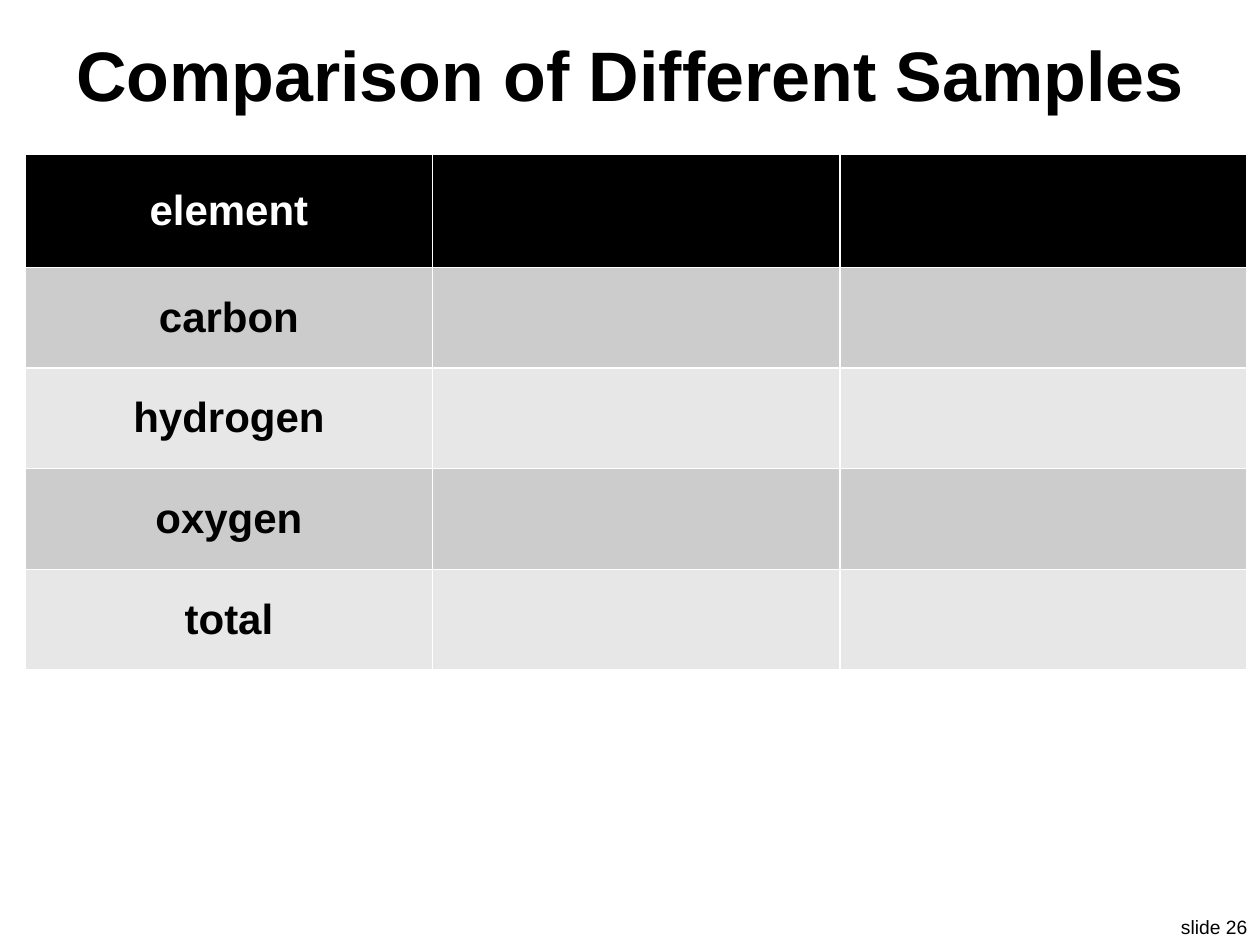
from pptx import Presentation
from pptx.dml.color import RGBColor
from pptx.enum.text import MSO_ANCHOR as Anchor, PP_ALIGN as Align
from pptx.util import Cm, Pt

ELEMENTS = ["element", "carbon", "hydrogen", "oxygen", "total"]
COLUMN_COUNT = 3
BLACK, WHITE = "000000", "FFFFFF"
BAND_FILLS = ["E7E7E7", "CCCCCC"]


def color(hex_value):
    """Return the colour for a hex string."""
    return RGBColor.from_string(hex_value)


def write_text(frame, text, size, align, font_color=BLACK, bold=False):
    """Write one formatted paragraph into a text frame."""
    paragraph = frame.paragraphs[0]
    paragraph.text = text
    paragraph.alignment = align
    font = paragraph.font
    font.name, font.size, font.bold = "Arial", Pt(size), bold
    font.color.rgb = color(font_color)


def add_text(slide, box, text, size, align, bold=False, wrap=True):
    """Add a text box with its text centred vertically."""
    shape = slide.shapes.add_textbox(*map(Cm, box))
    frame = shape.text_frame
    frame.word_wrap = wrap
    frame.vertical_anchor = Anchor.MIDDLE
    write_text(frame, text, size, align, bold=bold)


def fill_cell(cell, text, fill, font_color):
    """Fill one table cell and write its label."""
    cell.fill.solid()
    cell.fill.fore_color.rgb = color(fill)
    cell.vertical_anchor = Anchor.MIDDLE
    write_text(cell.text_frame, text, 24, Align.CENTER, font_color, True)


def add_element_table(slide):
    """Add the element table with blank columns for the samples."""
    shape = slide.shapes.add_table(
        len(ELEMENTS), COLUMN_COUNT, Cm(0.51), Cm(3.1), Cm(24.63), Cm(10.41)
    )
    table = shape.table
    for column in table.columns:
        column.width = Cm(8.21)
    for index, element in enumerate(ELEMENTS):
        header = index == 0
        table.rows[index].height = Cm(2.29 if header else 2.03)
        fill = BLACK if header else BAND_FILLS[index % 2]
        font_color = WHITE if header else BLACK
        for position in range(COLUMN_COUNT):
            text = element if position == 0 else ""
            fill_cell(table.cell(index, position), text, fill, font_color)


def main():
    """Build the slide and save the presentation."""
    presentation = Presentation()
    presentation.slide_width, presentation.slide_height = Cm(25.4), Cm(19.05)
    slide = presentation.slides.add_slide(presentation.slide_layouts[6])
    add_text(slide, (23.5, 18.31, 1.9, 0.74), "slide 26", 11, Align.RIGHT, wrap=False)
    add_text(slide, (0.51, 0.46, 24.38, 2.03), "Comparison of Different Samples",
             40, Align.CENTER, bold=True)
    add_element_table(slide)
    presentation.save("out.pptx")


if __name__ == "__main__":
    main()
